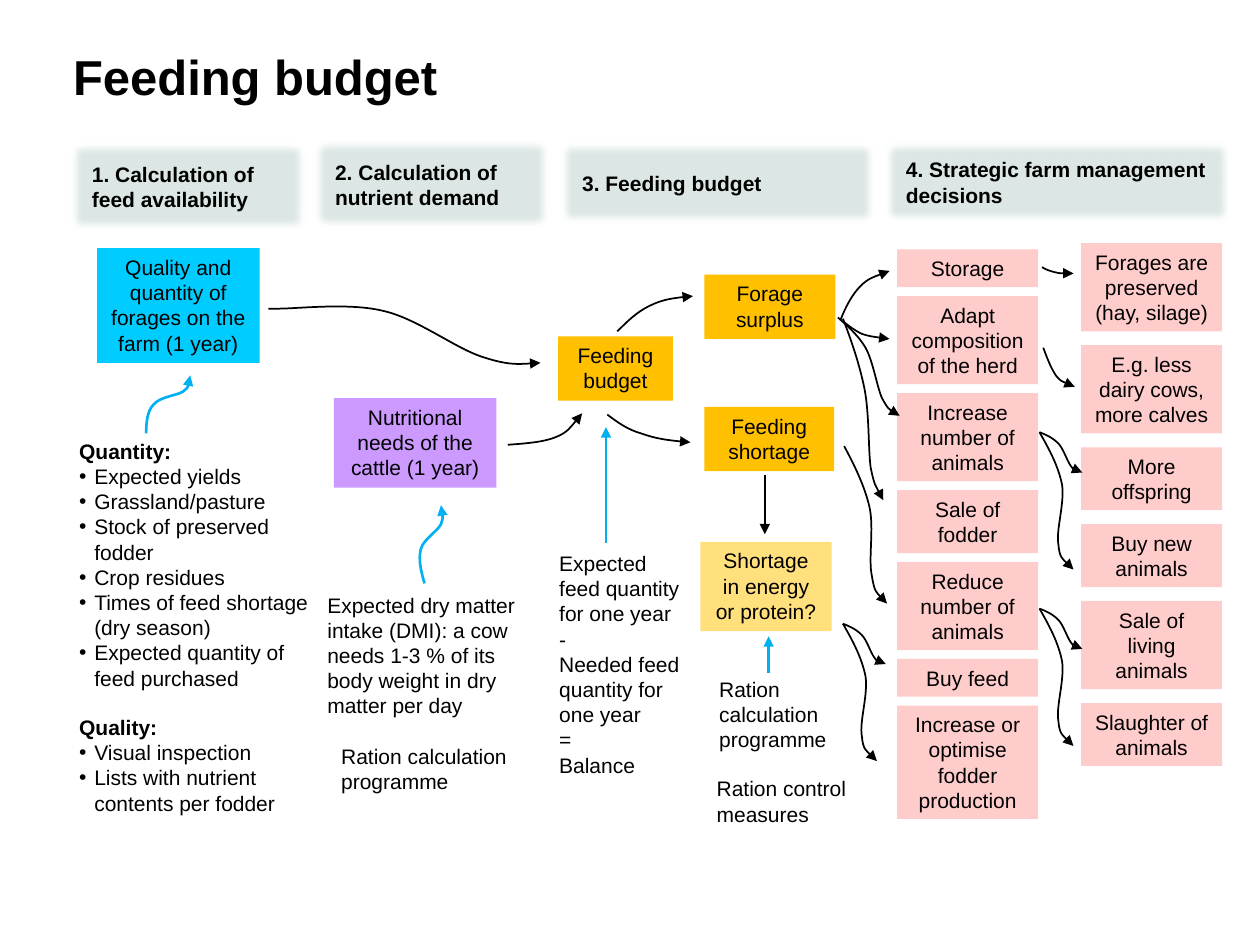
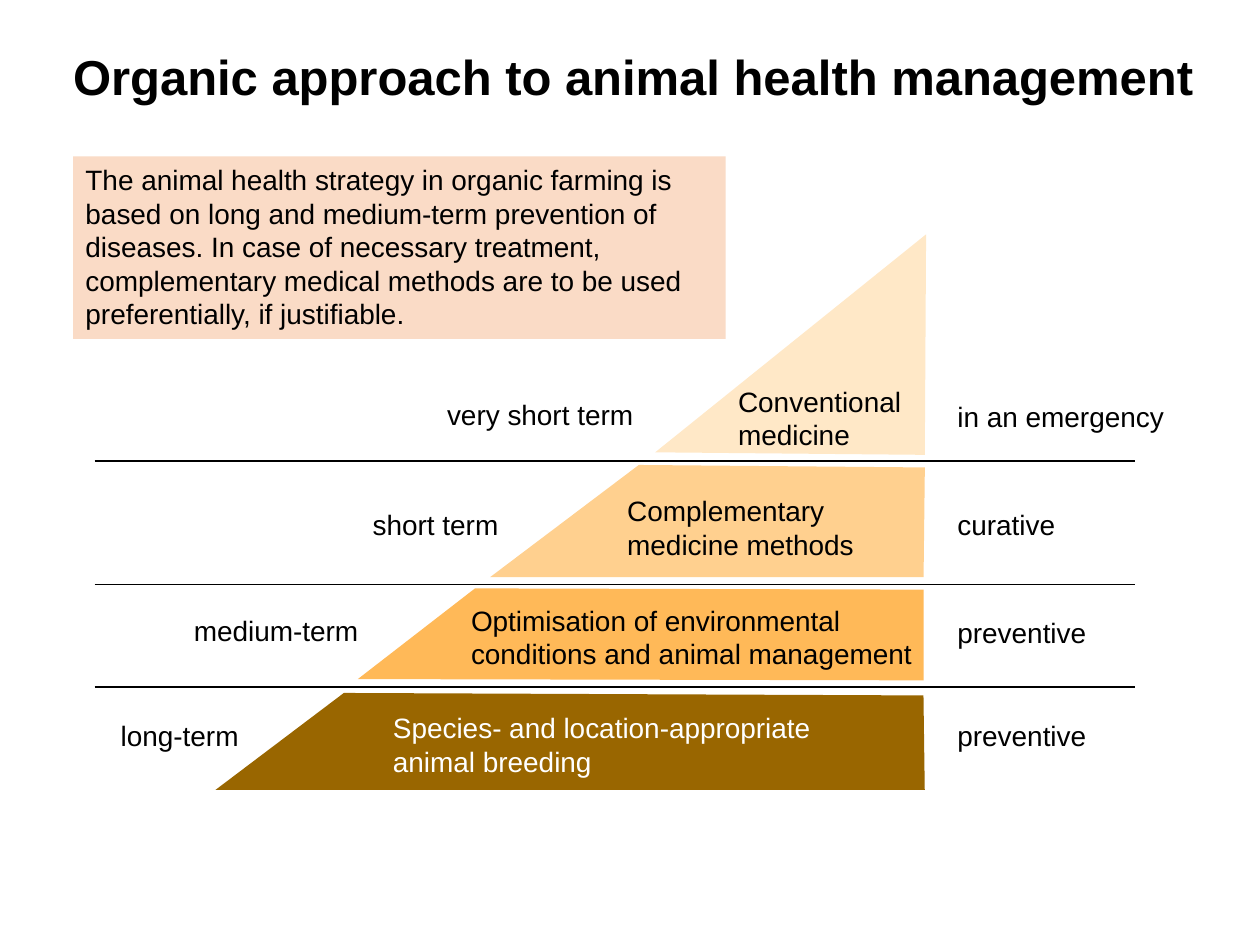
import pptx
import pptx.dml.color
import pptx.enum.shapes
import pptx.enum.text
import pptx.oxml
import pptx.oxml.ns
import pptx.util
from lxml import etree

Inches, Pt = pptx.util.Inches, pptx.util.Pt
PP_ALIGN = pptx.enum.text.PP_ALIGN
MSO_ANCHOR = pptx.enum.text.MSO_ANCHOR

FONT = "Arial"
BLACK, WHITE, BLUE = "000000", "FFFFFF", "00B0F0"
HEADER, GOLD, PALE_GOLD, PINK = "DDE8E6", "FFC000", "FFE07D", "FFCCCC"
TITLE_AT = (0.58, 0.25, 9.02, 0.76)
LINE_HEIGHT, BOX_PADDING = 0.2, 0.1

# Slide 1: feeding budget
BUDGET_TITLE = "Feeding budget"
STEPS = [
    ("1. Calculation of feed availability", (0.53, 1.1, 1.93, 0.76)),
    ("2. Calculation of nutrient demand", (2.46, 1.08, 1.93, 0.77)),
    ("3. Feeding budget", (4.42, 1.1, 2.55, 0.71)),
    ("4. Strategic farm management decisions", (6.99, 1.09, 2.81, 0.71)),
]
FLOW_BOXES = [
    ("Quality and quantity of forages on the farm (1 year)", (0.77, 1.97, 1.29, 0.91), "00CCFF"),
    ("Nutritional needs of the cattle (1 year)", (2.65, 3.16, 1.29, 0.71), "CC99FF"),
    ("Feeding budget", (4.43, 2.67, 0.91, 0.51), GOLD),
    ("Forage surplus", (5.59, 2.18, 1.04, 0.51), GOLD),
    ("Feeding shortage", (5.59, 3.23, 1.03, 0.51), GOLD),
    ("Shortage in energy or protein?", (5.56, 4.3, 1.04, 0.71), PALE_GOLD),
]
# Left, top, width, gap and the boxes with their number of lines
DECISION_COLUMNS = [
    (7.12, 1.98, 1.12, 0.07, [
        ("Storage", 1),
        ("Adapt composition of the herd", 3),
        ("Increase number of animals", 3),
        ("Sale of fodder", 2),
        ("Reduce number of animals", 3),
        ("Buy feed", 1),
        ("Increase or optimise fodder production", 4),
    ]),
    (8.58, 1.93, 1.12, 0.11, [
        ("Forages are preserved (hay, silage)", 3),
        ("E.g. less dairy cows, more calves", 3),
        ("More offspring", 2),
        ("Buy new animals", 2),
        ("Sale of living animals", 3),
        ("Slaughter of animals", 2),
    ]),
]
FEED_SOURCES = {
    "Quantity:": [
        "Expected yields", "Grassland/pasture", "Stock of preserved fodder",
        "Crop residues", "Times of feed shortage (dry season)",
        "Expected quantity of feed purchased",
    ],
    "Quality:": ["Visual inspection", "Lists with nutrient contents per fodder"],
}
FEED_SOURCES_AT = (0.53, 3.43, 2.09, 3.13)
BUDGET_NOTES = [
    (["Expected dry matter intake (DMI): a cow needs 1-3 % of its body weight "
      "in dry matter per day"], (2.5, 4.65, 1.77, 1.11)),
    (["Ration calculation programme"], (2.61, 5.85, 1.57, 0.5)),
    (["Expected feed quantity for one year", "-", "Needed feed quantity for one year",
      "=", "Balance"], (4.34, 4.32, 1.24, 1.92)),
    (["Ration calculation programme"], (5.61, 5.32, 1.3, 0.71)),
    (["Ration control measures"], (5.59, 6.11, 1.36, 0.5)),
]
# Each curve: a start, then three points for every Bézier piece
INPUT_CURVES = [
    [(1.16, 3.44), (1.16, 3.35), (1.17, 3.26), (1.22, 3.21), (1.27, 3.15), (1.4, 3.14),
     (1.45, 3.11), (1.5, 3.07), (1.51, 3.03), (1.51, 2.98)],
    [(3.37, 4.63), (3.34, 4.53), (3.32, 4.44), (3.34, 4.36), (3.36, 4.28), (3.47, 4.22),
     (3.5, 4.16), (3.52, 4.1), (3.51, 4.06), (3.5, 4.01)],
]
FLOW_CURVES = [
    [(2.13, 2.45), (2.16, 2.45), (2.19, 2.45), (2.21, 2.45), (2.37, 2.45), (2.78, 2.4),
     (3.05, 2.47), (3.31, 2.53), (3.61, 2.76), (3.82, 2.83), (4.03, 2.9), (4.16, 2.89),
     (4.29, 2.88)],
    [(4.03, 3.53), (4.17, 3.52), (4.31, 3.51), (4.41, 3.47), (4.51, 3.43), (4.62, 3.28),
     (4.62, 3.28)],
    [(4.9, 2.63), (4.98, 2.55), (5.05, 2.48), (5.15, 2.43), (5.25, 2.38), (5.37, 2.36),
     (5.5, 2.35)],
    [(4.82, 3.29), (4.9, 3.35), (4.98, 3.41), (5.09, 3.44), (5.2, 3.48), (5.34, 3.5),
     (5.48, 3.51)],
    [(8.28, 2.76), (8.31, 2.84), (8.34, 2.92), (8.38, 2.98), (8.42, 3.03), (8.48, 3.05),
     (8.53, 3.07)],
    [(8.27, 2.12), (8.3, 2.14), (8.33, 2.15), (8.37, 2.16), (8.41, 2.17), (8.47, 2.17),
     (8.52, 2.17)],
    [(6.65, 2.52), (6.73, 2.59), (6.81, 2.66), (6.87, 2.76), (6.93, 2.87), (6.96, 3.07),
     (7, 3.16), (7.05, 3.25), (7.09, 3.28), (7.14, 3.3)],
    [(6.69, 2.53), (6.76, 2.71), (6.82, 2.89), (6.86, 3.08), (6.9, 3.28), (6.89, 3.56),
     (6.91, 3.71), (6.94, 3.86), (6.98, 3.91), (7.01, 3.97)],
    [(6.69, 2.55), (6.74, 2.59), (6.78, 2.62), (6.84, 2.65), (6.9, 2.67), (6.98, 2.68),
     (7.06, 2.69)],
    [(6.67, 2.54), (6.71, 2.44), (6.76, 2.34), (6.83, 2.27), (6.89, 2.21), (6.98, 2.18),
     (7.06, 2.15)],
    [(6.7, 3.54), (6.78, 3.69), (6.86, 3.85), (6.9, 4.02), (6.94, 4.19), (6.89, 4.44),
     (6.92, 4.57), (6.94, 4.7), (6.99, 4.74), (7.04, 4.79)],
]
# The two branches of a fork, relative to where it starts
FORK_BRANCHES = [
    [(0, 0), (0.05, 0.02), (0.1, 0.04), (0.15, 0.09), (0.19, 0.13), (0.22, 0.23),
     (0.25, 0.27), (0.28, 0.31), (0.31, 0.32), (0.34, 0.32)],
    [(0, 0), (0.08, 0.14), (0.15, 0.27), (0.18, 0.42), (0.2, 0.57), (0.13, 0.78),
     (0.15, 0.89), (0.16, 1), (0.22, 1.04), (0.27, 1.09)],
]
FORK_STARTS = [(8.25, 3.43), (8.25, 4.83), (6.69, 4.95)]
STRAIGHT_ARROWS = [
    ((6.07, 3.77), (6.07, 4.24), BLACK, 1),
    ((6.1, 5.34), (6.1, 5.05), BLUE, 1.5),
    ((4.81, 4.31), (4.81, 3.39), BLUE, 1.5),
]

# Slide 2: animal health
HEALTH_TITLE = "Organic approach to animal health management"
STRATEGY = ("The animal health strategy in organic farming is based on long and medium-term "
            "prevention of diseases. In case of necessary treatment, complementary medical "
            "methods are to be used preferentially, if justifiable.")
STRATEGY_AT = (0.58, 1.24, 5.18, 1.45)
STAGES = [
    dict(outline=[(5.2, 3.59), (7.35, 1.86), (7.34, 3.61)], fill="FFE8C7", color=BLACK,
         measure="Conventional medicine", measure_at=(5.76, 3, 1.57, 0.54),
         term="very short term", term_at=(3.45, 3.11, 1.74, 0.3),
         purpose="in an emergency", purpose_top=3.12),
    dict(outline=[(5.07, 3.69), (7.34, 3.71), (7.33, 4.58), (3.89, 4.58)], fill="FFD08F",
         color=BLACK, measure="Complementary medicine methods",
         measure_at=(4.88, 3.87, 2.26, 0.54),
         term="short term", term_at=(2.86, 3.98, 1.23, 0.3),
         purpose="curative", purpose_top=3.98),
    dict(outline=[(3.77, 4.67), (7.33, 4.68), (7.33, 5.4), (2.84, 5.39)], fill="FFB958",
         color=BLACK, measure="Optimisation of environmental conditions and animal management",
         measure_at=(3.64, 4.74, 3.96, 0.54),
         term="medium-term", term_at=(1.44, 4.82, 1.54, 0.3),
         purpose="preventive", purpose_top=4.84),
    dict(outline=[(2.73, 5.5), (7.33, 5.52), (7.34, 6.27), (1.71, 6.27)], fill="996600",
         color=WHITE, measure="Species- and location-appropriate animal breeding",
         measure_at=(3.02, 5.59, 3.69, 0.54),
         term="long-term", term_at=(0.86, 5.65, 1.16, 0.3),
         purpose="preventive", purpose_top=5.65),
]
DIVIDER_TOPS = [3.66, 4.64, 5.45]
DIVIDER_LEFT, DIVIDER_RIGHT = 0.75, 9.01
PURPOSE_LEFT, PURPOSE_WIDTH = 7.5, 2.11


def rgb(color):
    return pptx.dml.color.RGBColor.from_string(color)


def sub(parent, tag, **attributes):
    return etree.SubElement(parent, pptx.oxml.ns.qn(tag), **attributes)


def add_text(slide, text, at, fill=None, size=12, bold=False, color=BLACK,
             align=PP_ALIGN.LEFT, anchor=MSO_ANCHOR.TOP, insets=(0.1, 0.05, 0.1, 0.05)):
    """Add a box; text is a string or a list of strings and dicts (text, bold, bullet, before)."""
    place = [Inches(length) for length in at]
    if fill:
        box = slide.shapes.add_shape(pptx.enum.shapes.MSO_SHAPE.RECTANGLE, *place)
        box.shadow.inherit = False
        box.fill.solid()
        box.fill.fore_color.rgb = rgb(fill)
        box.line.fill.background()
    else:
        box = slide.shapes.add_textbox(*place)
    frame = box.text_frame
    frame.word_wrap = True
    frame.vertical_anchor = anchor
    (frame.margin_left, frame.margin_top,
     frame.margin_right, frame.margin_bottom) = [Inches(inset) for inset in insets]
    for number, part in enumerate([text] if isinstance(text, str) else text):
        part = {"text": part} if isinstance(part, str) else part
        paragraph = frame.paragraphs[0] if number == 0 else frame.add_paragraph()
        paragraph.alignment = align
        if part.get("before"):
            paragraph.space_before = Pt(part["before"])
        if part.get("bullet"):
            properties = paragraph._p.get_or_add_pPr()
            properties.set("marL", str(Inches(0.12)))
            properties.set("indent", str(-Inches(0.12)))
            sub(properties, "a:buFont", typeface=FONT)
            sub(properties, "a:buChar", char="•")
        run = paragraph.add_run()
        run.text = part["text"]
        run.font.name = FONT
        run.font.size = Pt(size)
        run.font.bold = part.get("bold", bold)
        run.font.color.rgb = rgb(color)
    return box


def add_outline(slide, points, closed):
    corners = [(Inches(x), Inches(y)) for x, y in points]
    builder = slide.shapes.build_freeform(*corners[0])
    builder.add_line_segments(corners[1:], close=closed)
    outline = builder.convert_to_shape()
    outline.shadow.inherit = False
    return outline


def style_line(line, color, width, arrow=False):
    line.color.rgb = rgb(color)
    line.width = Pt(width)
    if arrow:
        sub(line._get_or_add_ln(), "a:tailEnd", type="triangle")


def add_curve(slide, points, color=BLACK, width=1):
    """Draw an arrow whose points after the first are taken three by three as Bézier pieces."""
    curve = add_outline(slide, points, closed=False)
    curve.fill.background()
    style_line(curve.line, color, width, arrow=True)
    segments = curve.element.xpath(".//a:lnTo")
    for first in range(0, len(segments), 3):
        piece = etree.Element(pptx.oxml.ns.qn("a:cubicBezTo"))
        segments[first].addprevious(piece)
        for segment in segments[first:first + 3]:
            piece.append(segment[0])
            segment.getparent().remove(segment)


def add_line(slide, start, end, color=BLACK, width=1, arrow=False):
    line = slide.shapes.add_connector(pptx.enum.shapes.MSO_CONNECTOR.STRAIGHT,
                                      *[Inches(length) for length in (*start, *end)])
    style_line(line.line, color, width, arrow)
    sub(line.element.spPr, "a:effectLst")


def add_titled_slide(deck, title):
    slide = deck.slides.add_slide(deck.slide_layouts[6])
    add_text(slide, title, TITLE_AT, size=28, bold=True,
             anchor=MSO_ANCHOR.MIDDLE, insets=(0, 0, 0.1, 0.05))
    return slide


def build_budget(deck):
    slide = add_titled_slide(deck, BUDGET_TITLE)
    for step, at in STEPS:
        header = add_text(slide, step, at, fill=HEADER, bold=True,
                          anchor=MSO_ANCHOR.MIDDLE, insets=(0.2,) * 4)
        sub(header.element.xpath("./p:spPr/a:effectLst")[0], "a:softEdge", rad=str(Pt(5)))
    for text, at, fill in FLOW_BOXES:
        add_text(slide, text, at, fill=fill, align=PP_ALIGN.CENTER)
    for left, top, width, gap, decisions in DECISION_COLUMNS:
        for decision, lines in decisions:
            height = BOX_PADDING + lines * LINE_HEIGHT
            add_text(slide, decision, (left, top, width, height), fill=PINK,
                     align=PP_ALIGN.CENTER)
            top += height + gap

    sources = []
    for heading, items in FEED_SOURCES.items():
        sources.append(dict(text=heading, bold=True, before=13.8 if sources else 0))
        sources += [dict(text=item, bullet=True) for item in items]
    add_text(slide, sources, FEED_SOURCES_AT)
    for note, at in BUDGET_NOTES:
        add_text(slide, note, at)

    for curve in INPUT_CURVES:
        add_curve(slide, curve, BLUE, 1.5)
    forks = [[(left + x, top + y) for x, y in branch]
             for left, top in FORK_STARTS for branch in FORK_BRANCHES]
    for curve in FLOW_CURVES + forks:
        add_curve(slide, curve)
    for start, end, color, width in STRAIGHT_ARROWS:
        add_line(slide, start, end, color, width, arrow=True)


def build_health(deck):
    slide = add_titled_slide(deck, HEALTH_TITLE)
    for stage in STAGES:
        step = add_outline(slide, stage["outline"], closed=True)
        step.fill.solid()
        step.fill.fore_color.rgb = rgb(stage["fill"])
        step.line.fill.background()
    for top in DIVIDER_TOPS:
        add_line(slide, (DIVIDER_LEFT, top), (DIVIDER_RIGHT, top))
    for stage in STAGES:
        add_text(slide, stage["measure"], stage["measure_at"], size=16, color=stage["color"])
        add_text(slide, stage["term"], stage["term_at"], size=16)
        add_text(slide, stage["purpose"],
                 (PURPOSE_LEFT, stage["purpose_top"], PURPOSE_WIDTH, 0.3), size=16)
    add_text(slide, STRATEGY, STRATEGY_AT, fill="FADBC6", size=16)


def main():
    deck = pptx.Presentation()
    deck.slide_width, deck.slide_height = Inches(10), Inches(7.5)
    build_budget(deck)
    build_health(deck)
    deck.save("out.pptx")


if __name__ == "__main__":
    main()
